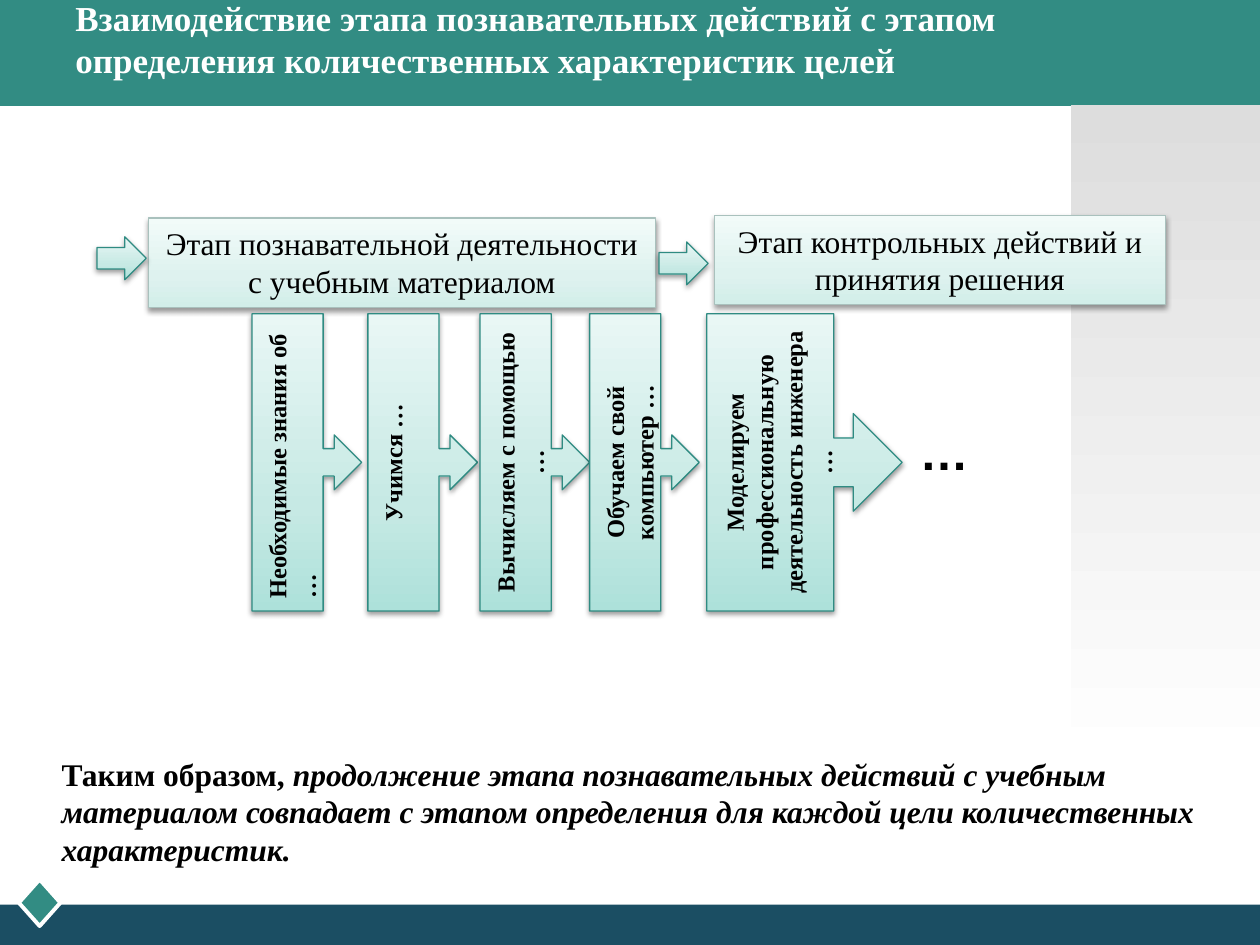
from lxml import etree
from pptx import Presentation, util as u
from pptx.dml.color import RGBColor
from pptx.enum import shapes, text
from pptx.oxml.ns import qn

TEAL = RGBColor(0x32, 0x8C, 0x83)
NAVY = RGBColor(0x1B, 0x4E, 0x63)
WHITE = RGBColor(0xFF, 0xFF, 0xFF)
BLACK = RGBColor(0, 0, 0)
STAGE_LINE = RGBColor(0xA9, 0xC1, 0xBD)
STEP_LINE = RGBColor(0x2F, 0x8B, 0x82)


def stops(*pairs):
    return [(place, RGBColor.from_string(color)) for place, color in pairs]


SIDE_STOPS = stops((0, "DDDDDD"), (100, "FFFFFF"))
STAGE_STOPS = stops((0, "D2EEE9"), (35, "DEF2EF"), (100, "F2FBF9"))
STEP_STOPS = stops((0, "ADE1DA"), (35, "C6E9E4"), (100, "E9F7F5"))

SERIF = {"name": "Times New Roman", "size": u.Pt(18), "bold": False}
STRONG = {**SERIF, "bold": True}
HEADING = {**STRONG, "size": u.Pt(20)}
STEP_TEXT = {**STRONG, "size": u.Pt(14)}
DOTS = {"name": "Arial", "size": u.Pt(28), "bold": True}
CENTER = text.PP_ALIGN.CENTER
SHAPE = shapes.MSO_SHAPE


def inches(box):
    return [u.Inches(value) for value in box]


def add_color(parent, color, alpha=None):
    node = etree.SubElement(parent, qn("a:srgbClr"), val=str(color))
    if alpha is not None:
        etree.SubElement(node, qn("a:alpha"), val=str(alpha * 1000))


def fill_gradient(shape, gradient, angle):
    shape.fill.gradient()
    shape.fill.gradient_angle = angle
    stop_list = next(shape.element.iter(qn("a:gsLst")))
    for old in list(stop_list):
        stop_list.remove(old)
    for place, color in gradient:
        add_color(etree.SubElement(stop_list, qn("a:gs"), pos=str(place * 1000)), color)


def add_shape(holder, kind, box, color=None, line=None, line_width=0.75):
    shape = holder.add_shape(kind, *inches(box))
    if color is not None:
        shape.fill.solid()
        shape.fill.fore_color.rgb = color
    if line is None:
        shape.line.fill.background()
    else:
        shape.line.color.rgb = line
        shape.line.width = u.Pt(line_width)
    shape.shadow.inherit = False
    return shape


def add_raised(holder, kind, box, gradient, line):
    """A shape with a light-to-dark gradient and a soft shadow below."""
    shape = add_shape(holder, kind, box, line=line)
    fill_gradient(shape, gradient, 90)
    effects = next(shape.element.iter(qn("a:effectLst")))
    shadow = etree.SubElement(effects, qn("a:outerShdw"), blurRad=str(u.Pt(3.1)),
                              dist=str(u.Pt(1.6)), dir="5400000", rotWithShape="0")
    add_color(shadow, BLACK, 38)
    return shape


def write(shape, spans, color=BLACK, align=text.PP_ALIGN.LEFT):
    """Fill one paragraph with (wording, format) spans."""
    frame = shape.text_frame
    frame.word_wrap = True
    frame.vertical_anchor = text.MSO_ANCHOR.TOP
    para = frame.paragraphs[0]
    para.alignment = align
    for wording, look in spans:
        if wording == "\n":
            para.add_line_break()
            continue
        span = para.add_run()
        span.text = wording
        span.font.color.rgb = color
        for key, value in look.items():
            setattr(span.font, key, value)
    return frame


def add_text(holder, box, spans, **options):
    return write(holder.add_textbox(*inches(box)), spans, **options)


def add_backdrop(page, width, height):
    parts = page.shapes
    add_shape(parts, SHAPE.RECTANGLE, (0, 0, width, 0.84), TEAL)
    add_shape(parts, SHAPE.RECTANGLE, (0, height - 0.32, width, 0.32), NAVY)
    add_shape(parts, SHAPE.DIAMOND, (0.15, 6.98, 0.33, 0.37), TEAL, WHITE, 2.25)
    # Shaded side panel
    panel = add_shape(parts, SHAPE.RECTANGLE, (width - 1.5, 0.83, 1.5, 5.25))
    fill_gradient(panel, SIDE_STOPS, 270)


def add_title(page, box):
    frame = add_text(page.shapes, box, [
        ("Взаимодействие этапа познавательных действий с этапом", HEADING),
        ("\n", {}),
        ("определения количественных характеристик целей", HEADING)], color=WHITE)
    frame.margin_top = 0


def add_stage(page, box, wording):
    shape = add_raised(page.shapes, SHAPE.RECTANGLE, box, STAGE_STOPS, STAGE_LINE)
    write(shape, [(wording, SERIF)], align=CENTER)


def add_step(page, box, text_offset, text_width, wording, align):
    """A callout arrow with upward text, held together as a group."""
    left, top, _, height = box
    group = page.shapes.add_group_shape().shapes
    add_raised(group, SHAPE.RIGHT_ARROW_CALLOUT, box, STEP_STOPS, STEP_LINE)
    label = group.add_textbox(*inches((left + text_offset, top, text_width, height)))
    write(label, [(wording, STEP_TEXT)], align=align)
    next(label.element.iter(qn("a:bodyPr"))).set("vert", "vert270")


def add_steps(page, top, height):
    steps = [
        (2, 0.87, 0.03, 0.67, "Необходимые знания об …", text.PP_ALIGN.LEFT),
        (2.92, 0.87, 0.03, 0.44, "Учимся …", CENTER),
        (3.81, 0.87, 0.03, 0.67, "Вычисляем с помощью …", CENTER),
        (4.68, 0.87, 0.03, 0.67, "Обучаем свой компьютер …", CENTER),
        (5.61, 1.55, 0.05, 2.05,
         "Моделируем профессиональную деятельность инженера …", CENTER),
    ]
    for left, width, *label in steps:
        add_step(page, (left, top, width, height), *label)
    add_text(page.shapes, (7.2, 3.3, 0.99, 0.57), [("…", DOTS)])


def add_conclusion(page, box):
    add_text(page.shapes, box, [
        ("Таким образом, ", STRONG),
        ("продолжение этапа познавательных действий с учебным материалом совпадает "
         "с этапом определения для каждой цели количественных характеристик.",
         {**STRONG, "italic": True})])


def main():
    deck = Presentation()
    deck.slide_width, deck.slide_height = u.Inches(10), u.Inches(7.5)
    page = deck.slides.add_slide(deck.slide_layouts[6])
    add_backdrop(page, 10, 7.5)
    add_title(page, (0.5, -0.03, 9, 0.7))
    add_conclusion(page, (0.39, 5.94, 9.45, 1.31))
    # Stages and the arrows that lead into them
    add_stage(page, (1.18, 1.73, 4.02, 0.71),
              "Этап познавательной деятельности с учебным материалом")
    add_stage(page, (5.67, 1.71, 3.58, 0.71),
              "Этап контрольных действий и принятия решения")
    add_steps(page, 2.49, 2.36)
    for left, top in ((0.77, 1.88), (5.23, 1.92)):
        add_raised(page.shapes, SHAPE.RIGHT_ARROW, (left, top, 0.39, 0.34),
                   STEP_STOPS, STEP_LINE)
    deck.save("out.pptx")


if __name__ == "__main__":
    main()
